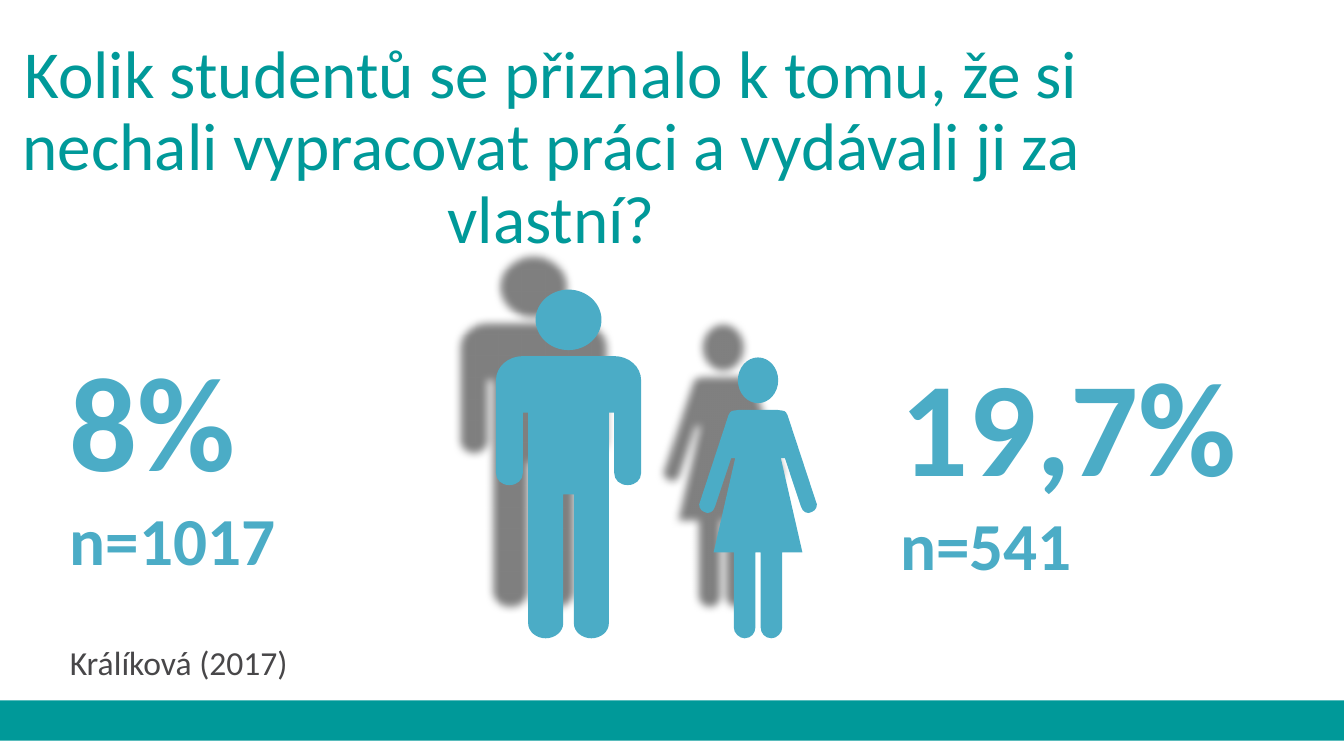
from dataclasses import dataclass

from lxml import etree
from pptx import Presentation
from pptx.dml.color import RGBColor
from pptx.enum import shapes, text
from pptx.oxml import ns
from pptx.util import Cm, Pt

TEAL = RGBColor(0x00, 0x99, 0x99)
BLUE = RGBColor(0x4B, 0xAC, 0xC6)
GREY = RGBColor(0x48, 0x47, 0x49)
UNITS_PER_INCH = 2540

Segment = tuple[float, ...]


@dataclass
class Line:
    words: str
    size: int
    color: RGBColor
    bold: bool = False


@dataclass
class Block:
    left: float
    top: float
    width: float
    height: float
    lines: list[Line]
    anchor: text.MSO_ANCHOR = text.MSO_ANCHOR.TOP
    align: text.PP_ALIGN = text.PP_ALIGN.LEFT
    spacing: float = 1.0


@dataclass
class Figure:
    axis: float
    head_center: float
    head_width: float
    head_height: float
    right_half: list[Segment]


TITLE = Block(0.16, 1.98, 20.52, 1.68, [
    Line("Kolik studentů se přiznalo k tomu, že si nechali vypracovat práci "
         "a vydávali ji za vlastní?", 36, TEAL),
], text.MSO_ANCHOR.MIDDLE, text.PP_ALIGN.CENTER, 0.9)
MEN = Block(1.07, 6.12, 7.24, 5.46, [
    Line("8%", 72, BLUE, True), Line("n=1017", 36, BLUE, True)])
WOMEN = Block(16.76, 4.58, 9.07, 8.33, [
    Line("19,7%", 72, BLUE, True), Line("n=541", 36, BLUE, True),
], text.MSO_ANCHOR.MIDDLE)
CITATION = Block(1.07, 11.89, 9.07, 1.35, [Line("Králíková (2017)", 18, GREY)])

MAN = Figure(4.23, 2.38, 0.49, 0.45, [
    (0.34, 2.65), (0.45, 2.65, 0.54, 2.73, 0.54, 2.83),
    (0.54, 3.52), (0.54, 3.57, 0.5, 3.61, 0.44, 3.61),
    (0.38, 3.61, 0.34, 3.57, 0.34, 3.52), (0.34, 3.07), (0.3, 3.07),
    (0.3, 4.64), (0.3, 4.7, 0.24, 4.75, 0.17, 4.75),
    (0.1, 4.75, 0.04, 4.7, 0.04, 4.64), (0.04, 3.68),
])
WOMAN = Figure(5.64, 2.83, 0.3, 0.34, [
    (0.14, 3.05), (0.2, 3.06, 0.2, 3.05, 0.22, 3.09),
    (0.43, 3.73), (0.45, 3.76, 0.43, 3.8, 0.4, 3.81),
    (0.37, 3.83, 0.33, 3.81, 0.32, 3.77), (0.2, 3.41), (0.17, 3.41),
    (0.33, 4.11), (0.18, 4.11), (0.18, 4.67),
    (0.18, 4.71, 0.14, 4.75, 0.1, 4.75),
    (0.05, 4.75, 0.02, 4.71, 0.02, 4.67), (0.02, 4.11),
])


def write_block(box, block: Block) -> None:
    box.left, box.top = Cm(block.left), Cm(block.top)
    box.width, box.height = Cm(block.width), Cm(block.height)
    frame = box.text_frame
    frame.word_wrap = True
    frame.auto_size = text.MSO_AUTO_SIZE.NONE
    frame.vertical_anchor = block.anchor
    frame.margin_left = frame.margin_right = Cm(0.25)
    frame.margin_top = frame.margin_bottom = Cm(0.25)
    for index, line in enumerate(block.lines):
        para = frame.add_paragraph() if index else frame.paragraphs[0]
        para.alignment = block.align
        para.line_spacing = block.spacing
        para.space_before = para.space_after = Pt(0)
        properties = para._p.get_or_add_pPr()
        properties.set("marL", "0")
        properties.set("indent", "0")
        etree.SubElement(properties, ns.qn("a:buNone"))
        span = para.add_run()
        span.text = line.words
        span.font.name = "Calibri"
        span.font.size = Pt(line.size)
        span.font.bold = line.bold
        span.font.color.rgb = line.color


def head_half(figure: Figure) -> list[Segment]:
    rx, ry, y = figure.head_width / 2, figure.head_height / 2, figure.head_center
    k = 0.55
    return [(0, y - ry), (k * rx, y - ry, rx, y - k * ry, rx, y),
            (rx, y + k * ry, k * rx, y + ry, 0, y + ry)]


def mirrored(figure: Figure, half: list[Segment]) -> list[Segment]:
    whole = list(half)
    last_x, last_y = half[-1][-2:]
    if last_x:
        whole.append((-last_x, last_y))
    for before, segment in reversed(list(zip(half, half[1:]))):
        end_x, end_y = before[-2:]
        if len(segment) == 6:
            x1, y1, x2, y2 = segment[:4]
            whole.append((-x2, y2, -x1, y1, -end_x, end_y))
        else:
            whole.append((-end_x, end_y))
    return [tuple(round((value if i % 2 else figure.axis + value) * UNITS_PER_INCH)
                  for i, value in enumerate(segment)) for segment in whole]


def bend_curves(shape, segments: list[Segment], left: int, top: int) -> None:
    edges = list(shape._element.iter(ns.qn("a:lnTo")))
    for edge, segment in zip(edges, segments):
        if len(segment) == 6:
            curve = etree.Element(ns.qn("a:cubicBezTo"))
            for x, y in zip(segment[::2], segment[1::2]):
                etree.SubElement(curve, ns.qn("a:pt"), x=str(x - left), y=str(y - top))
            edge.getparent().replace(edge, curve)


def add_shadow(shape) -> None:
    shape.shadow.inherit = False
    effects = shape._element.spPr.find(ns.qn("a:effectLst"))
    shadow = etree.SubElement(
        effects, ns.qn("a:outerShdw"), blurRad=str(Pt(4.5)), dist=str(Pt(25.5)),
        dir=str(223 * 60000), algn="ctr", rotWithShape="0")
    color = etree.SubElement(shadow, ns.qn("a:srgbClr"), val="000000")
    etree.SubElement(color, ns.qn("a:alpha"), val="50000")


def draw_figure(page, figure: Figure) -> None:
    body = mirrored(figure, figure.right_half)
    head = mirrored(figure, head_half(figure))
    builder = page.shapes.build_freeform(*body[0], scale=Cm(2.54) / UNITS_PER_INCH)
    builder.add_line_segments([segment[-2:] for segment in body[1:]], close=True)
    builder.move_to(*head[0])
    builder.add_line_segments([segment[-2:] for segment in head[1:]], close=True)
    shape = builder.convert_to_shape()
    left = min(segment[-2] for segment in body + head)
    top = min(segment[-1] for segment in body + head)
    closing = [body[0]]
    edge_count = len(list(shape._element.iter(ns.qn("a:lnTo"))))
    has_closing_edge = edge_count > len(body) + len(head) - 2
    bend_curves(shape, body[1:] + closing * has_closing_edge + head[1:], left, top)
    shape.fill.solid()
    shape.fill.fore_color.rgb = BLUE
    shape.line.fill.background()
    add_shadow(shape)


def main() -> None:
    deck = Presentation()
    deck.slide_width, deck.slide_height = Cm(25.4), Cm(14.29)
    page = deck.slides.add_slide(deck.slide_layouts[3])
    band = page.shapes.add_shape(
        shapes.MSO_SHAPE.RECTANGLE, 0, Cm(13.24), deck.slide_width, Cm(0.76))
    band.shadow.inherit = False
    band.fill.solid()
    band.fill.fore_color.rgb = TEAL
    band.line.fill.background()
    write_block(page.shapes.title, TITLE)
    write_block(page.shapes.add_textbox(0, 0, 0, 0), CITATION)
    write_block(page.placeholders[1], MEN)
    write_block(page.placeholders[2], WOMEN)
    for figure in (MAN, WOMAN):
        draw_figure(page, figure)
    deck.save("out.pptx")


if __name__ == "__main__":
    main()
